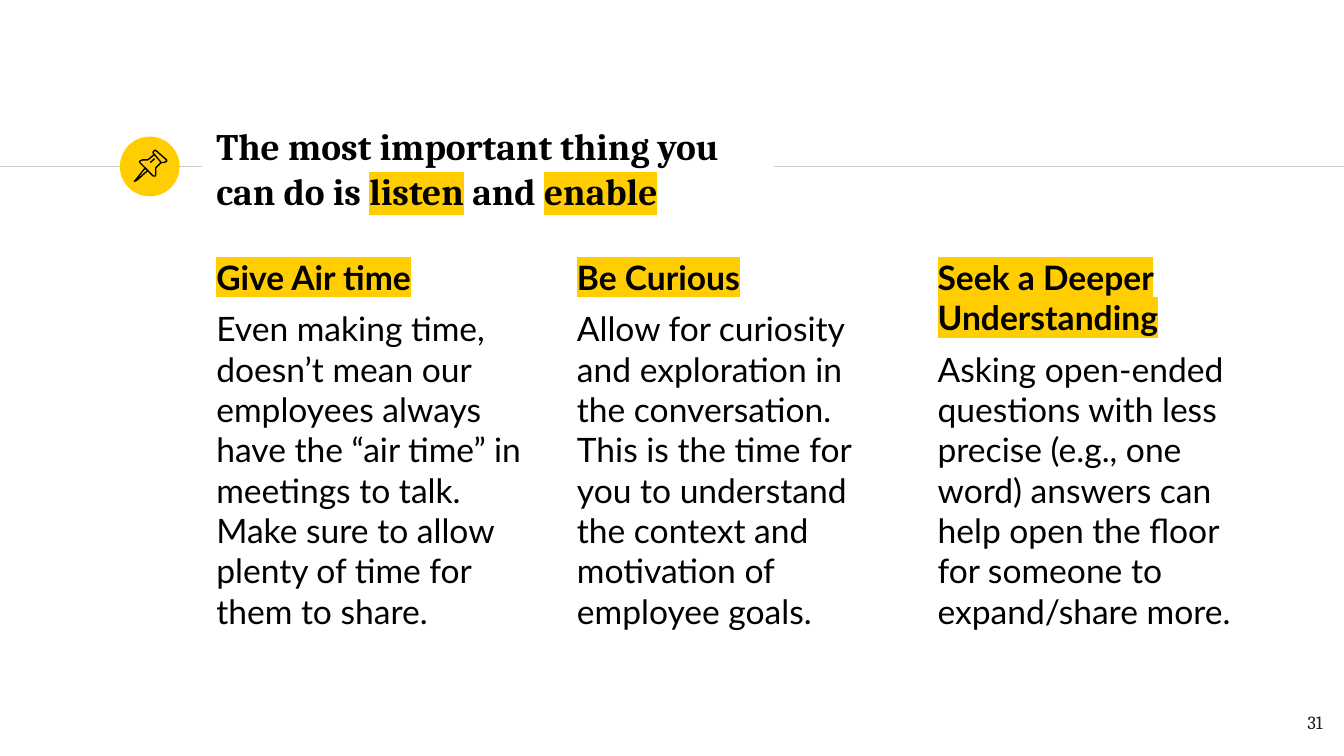
from lxml import etree
from pptx import Presentation
from pptx.dml.color import RGBColor
from pptx.enum import shapes, text
from pptx.oxml import ns
from pptx.util import Pt

YELLOW, GRAY, BLACK, INK = "FFCD00", "CCCCCC", "000000", "1D1D1B"


def color(hex_string):
    return RGBColor.from_string(hex_string)


def add_run(paragraph, words, font_name, size, ink=BLACK, bold=False, highlight=None):
    run = paragraph.add_run()
    run.text = words
    run.font.name, run.font.size, run.font.bold = font_name, Pt(size), bold
    run.font.color.rgb = color(ink)
    if highlight:
        mark = etree.Element(ns.qn("a:highlight"))
        etree.SubElement(mark, ns.qn("a:srgbClr"), val=highlight)
        run._r.get_or_add_rPr().find(ns.qn("a:solidFill")).addnext(mark)


presentation = Presentation()
presentation.slide_width, presentation.slide_height = Pt(720), Pt(405)
slide = presentation.slides.add_slide(presentation.slide_layouts.get_by_name("Comparison"))
title, *columns, spare = slide.placeholders
spare.element.getparent().remove(spare.element)

# Rule across the slide, broken by the title
for start, end in [(0, 108), (414.7, 720)]:
    line = slide.shapes.add_connector(
        shapes.MSO_CONNECTOR.STRAIGHT, Pt(start), Pt(89.2), Pt(end), Pt(89.2))
    line.line.color.rgb = color(GRAY)
    line.line.width = Pt(0.75)
    etree.SubElement(line._element.spPr, ns.qn("a:effectLst"))

# Pin in a yellow circle
circle = slide.shapes.add_shape(shapes.MSO_SHAPE.OVAL, Pt(64.2), Pt(73.2), Pt(32), Pt(32))
circle.shadow.inherit = False
circle.fill.solid()
circle.fill.fore_color.rgb = color(YELLOW)
circle.line.fill.background()

needle = [(77.8, 90), (72.7, 96.5), (72, 97.2), (73.4, 96.5), (79.2, 91.4)]
cap = [(82.8, 82.8), (86.4, 87.1), (87.8, 87.1), (89.3, 86.4), (89.3, 85.7),
       (83.5, 80.6), (82.8, 80.6), (82.1, 81.4), (82.1, 82.1)]
body = [(82.8, 82.8), (79.2, 85.7), (76.3, 85.7), (74.9, 86.4), (74.9, 87.1),
        (82.1, 94.3), (83.2, 94.3), (83.5, 93.6), (83.5, 90), (86.4, 87.1)]
crease = [(80.6, 87.1), (82.8, 85)]
pin = slide.shapes.add_group_shape()
for points, closed in [(needle, True), (cap, True), (body, False), (crease, False)]:
    corners = [(Pt(x), Pt(y)) for x, y in points]
    builder = pin.shapes.build_freeform(*corners[0])
    builder.add_line_segments(corners[1:], close=closed)
    outline = builder.convert_to_shape()
    outline.shadow.inherit = False
    outline.fill.background()
    outline.line.color.rgb = color(BLACK)
    outline.line.width = Pt(0.75)

number = slide.shapes.add_textbox(Pt(672.5), Pt(373.7), Pt(43.2), Pt(31))

# Shared frame settings
title.left, title.top, title.width, title.height = Pt(108.7), Pt(72.7), Pt(319), Pt(34.6)
for index, column in enumerate(columns):
    column.left, column.top = Pt(108.7 + 193.2 * index), Pt(130.3)
    column.width, column.height = Pt(183.6), Pt(245.5)
for shape in [title, number, *columns]:
    frame = shape.text_frame
    frame.word_wrap = True
    frame.auto_size = text.MSO_AUTO_SIZE.NONE
    frame.vertical_anchor = text.MSO_ANCHOR.TOP
    frame.margin_left = frame.margin_right = frame.margin_top = frame.margin_bottom = Pt(7.2)

title.text_frame.vertical_anchor = text.MSO_ANCHOR.MIDDLE
paragraph = title.text_frame.paragraphs[0]
paragraph.alignment = text.PP_ALIGN.LEFT
for words, highlight in [("The most important thing you can do is ", None), ("listen", YELLOW),
                         (" and ", None), ("enable", YELLOW)]:
    add_run(paragraph, words, "Cambria", 20, bold=True, highlight=highlight)

advice = [
    ("Give Air time",
     "Even making time, doesn’t mean our employees always have the “air time” in meetings "
     "to talk. Make sure to allow plenty of time for them to share."),
    ("Be Curious",
     "Allow for curiosity and exploration in the conversation. This is the time for you to "
     "understand the context and motivation of employee goals."),
    ("Seek a Deeper Understanding",
     "Asking open-ended questions with less precise (e.g., one word) answers can help open "
     "the floor for someone to expand/share more."),
]
for column, (heading, explanation) in zip(columns, advice):
    frame = column.text_frame
    first, second = frame.paragraphs[0], frame.add_paragraph()
    for paragraph, space in [(first, 0), (second, 6)]:
        properties = paragraph._p.get_or_add_pPr()
        properties.set("marL", "0")
        properties.set("indent", "0")
        etree.SubElement(properties, ns.qn("a:buNone"))
        paragraph.space_before = Pt(space)
    add_run(first, heading, "Lato", 18, bold=True, highlight=YELLOW)
    add_run(second, explanation, "Lato", 18)

paragraph = number.text_frame.paragraphs[0]
paragraph.alignment = text.PP_ALIGN.RIGHT
add_run(paragraph, "31", "Cambria", 10, ink=INK)

presentation.save("out.pptx")
